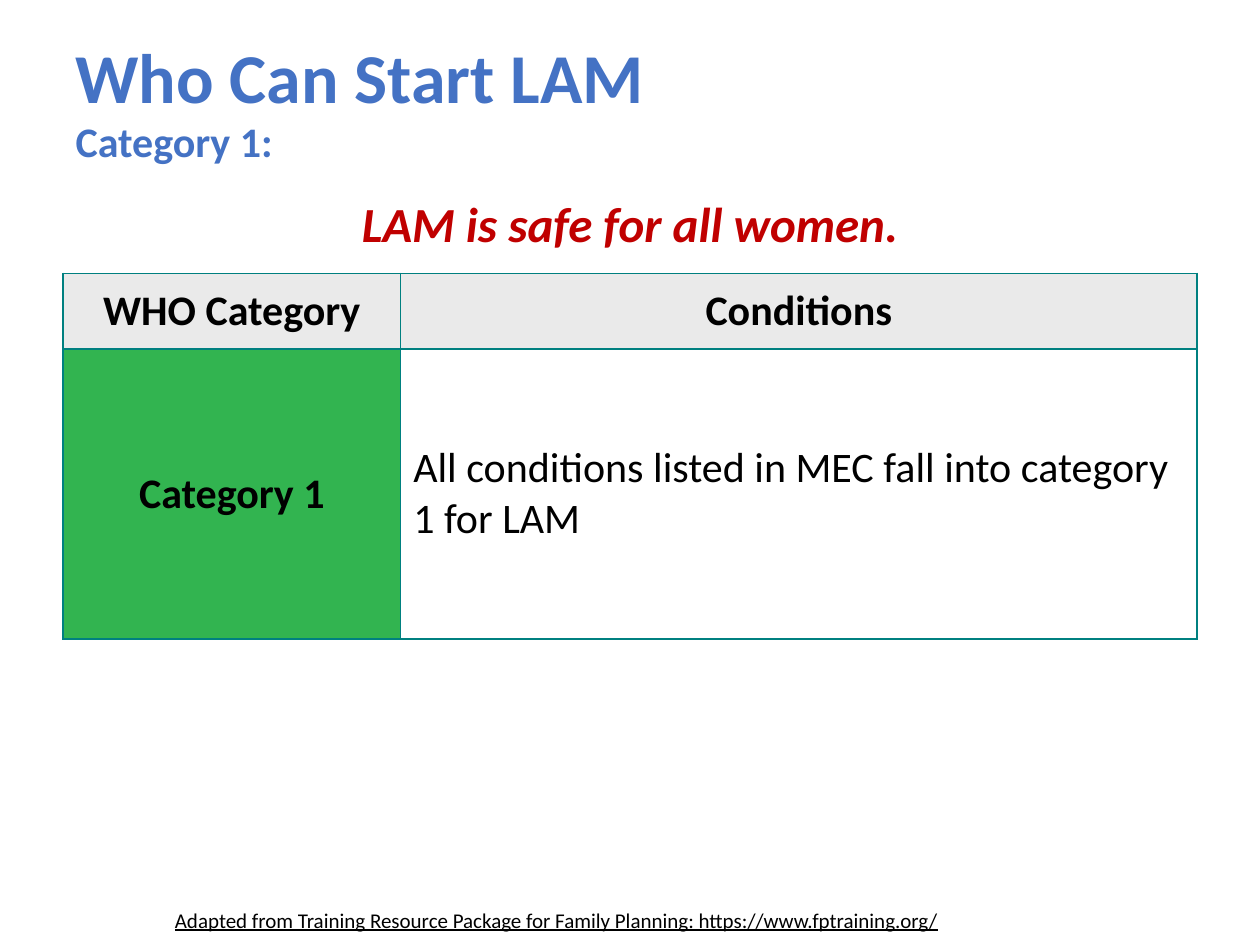
"""Build the slide on who can start LAM, with its category table."""
from lxml import etree
from pptx import Presentation
from pptx.dml.color import RGBColor
from pptx.enum.text import MSO_ANCHOR, MSO_AUTO_SIZE, PP_ALIGN
from pptx.oxml.ns import qn
from pptx.util import Inches, Pt

LEFT, CENTER = PP_ALIGN.LEFT, PP_ALIGN.CENTER
TOP, MIDDLE = MSO_ANCHOR.TOP, MSO_ANCHOR.MIDDLE
NO_AUTOFIT = MSO_AUTO_SIZE.NONE

THEME = {
    "font": "Calibri",
    "title": "4472C4", "accent": "C00000", "text": "000000",
    "header": "EAEAEA", "category": "32B450", "border": "008080",
    "title_size": 40, "message_size": 28, "body_size": 24, "source_size": 12,
    "border_width": 1,
}

TITLE_LINES = [("Who Can Start LAM", "title_size"), ("Category 1:", "body_size")]
MESSAGE = "LAM is safe for all women."
SOURCE = ("Adapted from Training Resource Package for Family Planning: "
          "https://www.fptraining.org/")
TABLE_ROWS = [
    ["WHO Category", "Conditions"],
    ["Category 1", "All conditions listed in MEC fall into category 1 for LAM"],
]
COLUMN_WIDTHS = [2.68, 6.32]
ROW_HEIGHTS = [0.6, 2.3]
MARGIN, CONTENT_WIDTH = 0.5, 9


def add_run(paragraph, text, size, color="text", bold=False, italic=False, underline=False):
    run = paragraph.add_run()
    run.text = text
    font = run.font
    font.name, font.size = THEME["font"], Pt(THEME[size])
    font.color.rgb = RGBColor.from_string(THEME[color])
    font.bold, font.italic, font.underline = bold, italic, underline


def prepare_frame(frame, anchor):
    frame.word_wrap = True
    frame.auto_size = NO_AUTOFIT
    frame.vertical_anchor = anchor
    frame.margin_left = frame.margin_right = Inches(0.1)
    frame.margin_top = frame.margin_bottom = Inches(0.05)


def fill_title(title):
    title.left, title.top = Inches(MARGIN), Inches(0.32)
    title.width, title.height = Inches(CONTENT_WIDTH), Inches(1)
    frame = title.text_frame
    prepare_frame(frame, MIDDLE)
    for index, (text, size) in enumerate(TITLE_LINES):
        paragraph = frame.add_paragraph() if index else frame.paragraphs[0]
        paragraph.alignment, paragraph.line_spacing = LEFT, 0.95
        paragraph.space_before = Pt(0)
        add_run(paragraph, text, size, "title", bold=True)


def add_line_of_text(slide, bounds, alignment, text, size, line_spacing=1.0, **style):
    frame = slide.shapes.add_textbox(*map(Inches, bounds)).text_frame
    prepare_frame(frame, TOP)
    paragraph = frame.paragraphs[0]
    paragraph.alignment, paragraph.line_spacing = alignment, line_spacing
    add_run(paragraph, text, size, **style)


def set_borders(cell):
    properties = cell._tc.get_or_add_tcPr()
    for side in ("lnL", "lnR", "lnT", "lnB"):
        line = etree.SubElement(properties, qn(f"a:{side}"), w=str(Pt(THEME["border_width"])))
        fill = etree.SubElement(line, qn("a:solidFill"))
        etree.SubElement(fill, qn("a:srgbClr"), val=THEME["border"])


def fill_cell(cell, text, is_header, is_category):
    set_borders(cell)
    if is_header or is_category:
        cell.fill.solid()
        color = THEME["header" if is_header else "category"]
        cell.fill.fore_color.rgb = RGBColor.from_string(color)
    else:
        cell.fill.background()
    cell.vertical_anchor = MIDDLE
    paragraph = cell.text_frame.paragraphs[0]
    paragraph.alignment = CENTER if is_header or is_category else LEFT
    add_run(paragraph, text, "body_size", bold=is_header or is_category)


def add_category_table(slide):
    table = slide.shapes.add_table(
        len(TABLE_ROWS), len(COLUMN_WIDTHS), Inches(MARGIN), Inches(2.17),
        Inches(CONTENT_WIDTH), Inches(sum(ROW_HEIGHTS))).table
    table.first_row = table.horz_banding = False
    for column, width in zip(table.columns, COLUMN_WIDTHS):
        column.width = Inches(width)
    for row_index, (row, height) in enumerate(zip(table.rows, ROW_HEIGHTS)):
        row.height = Inches(height)
        for column_index, text in enumerate(TABLE_ROWS[row_index]):
            fill_cell(row.cells[column_index], text, row_index == 0, column_index == 0)


def main():
    presentation = Presentation()
    presentation.slide_width, presentation.slide_height = Inches(10), Inches(7.5)
    slide = presentation.slides.add_slide(presentation.slide_layouts[5])
    fill_title(slide.shapes.title)
    add_category_table(slide)
    add_line_of_text(slide, (MARGIN, 1.56, CONTENT_WIDTH, 0.51), CENTER, MESSAGE,
                     "message_size", 0.85, color="accent", bold=True, italic=True)
    add_line_of_text(slide, (1.29, 7.15, 6.94, 0.27), LEFT, SOURCE,
                     "source_size", underline=True)
    presentation.save("out.pptx")


if __name__ == "__main__":
    main()
